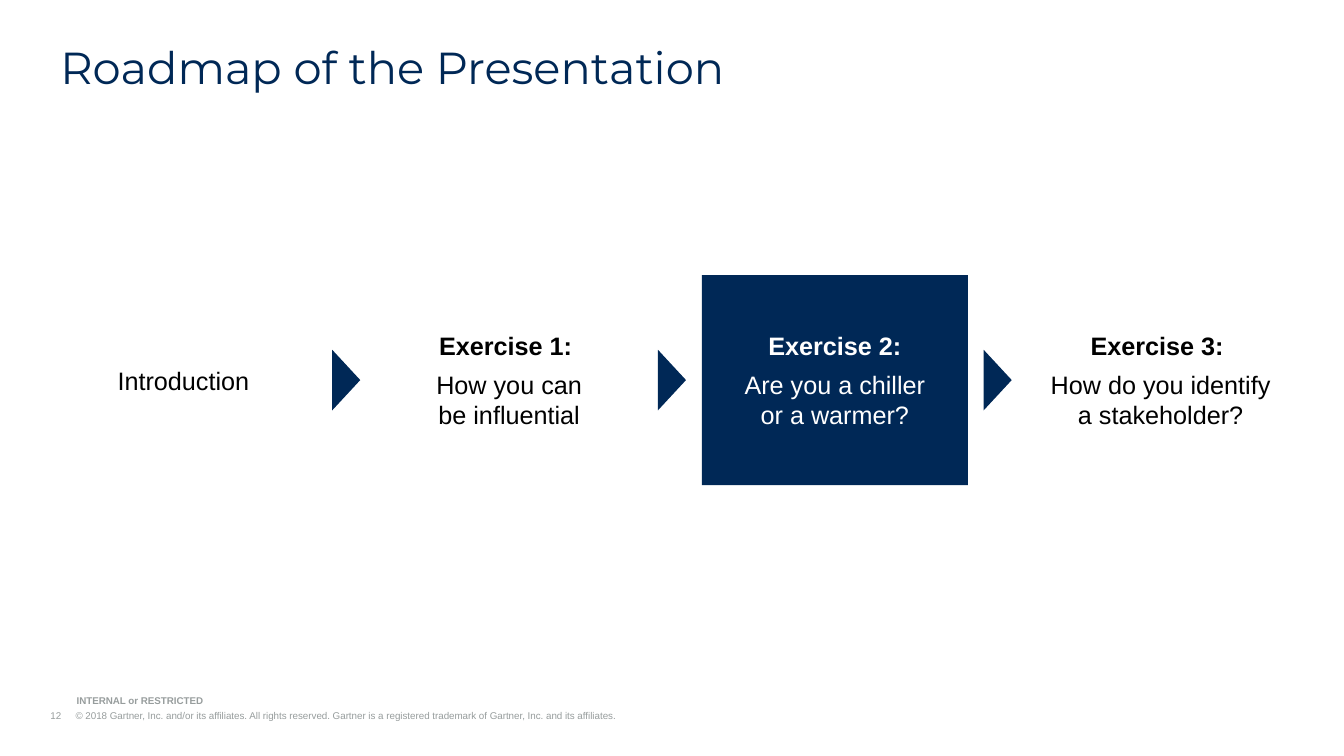
from lxml import etree
from pptx import Presentation
from pptx.dml.color import RGBColor
from pptx.enum.shapes import MSO_SHAPE
from pptx.enum.text import MSO_ANCHOR, PP_ALIGN
from pptx.oxml.ns import qn
from pptx.util import Pt

RECTANGLE = MSO_SHAPE.RECTANGLE
TRIANGLE = MSO_SHAPE.ISOSCELES_TRIANGLE
TOP, MIDDLE, BOTTOM = MSO_ANCHOR.TOP, MSO_ANCHOR.MIDDLE, MSO_ANCHOR.BOTTOM
CENTER = PP_ALIGN.CENTER

NAVY, BLACK, WHITE, GRAY = "002856", "000000", "FFFFFF", "979D9D"
SLIDE_WIDTH, SLIDE_HEIGHT, MARGIN = 960, 540, 36
STEP_WIDTH = 190
ARROW_LENGTH, ARROW_BREADTH = 20, 43.2
FOOTER_INDENT = 18

STEPS = [
    ("", "Introduction"),
    ("Exercise 1: ", "How you can\nbe influential"),
    ("Exercise 2:", "Are you a chiller\nor a warmer?"),
    ("Exercise 3: ", "How do you identify\na stakeholder?"),
]
CURRENT_STEP = 2
COPYRIGHT = ("12\t© 2018 Gartner, Inc. and/or its affiliates. All rights reserved.\u00a0"
             "Gartner is a registered trademark of Gartner, Inc. and its affiliates.")


def color(hex_string):
    return RGBColor.from_string(hex_string)


def format_runs(paragraph, size, hex_string, font="Arial", bold=False):
    for run in paragraph.runs:
        run.font.size = Pt(size)
        run.font.name = font
        run.font.bold = bold
        run.font.color.rgb = color(hex_string)


def add_filled_shape(slide, kind, left, top, width, height):
    shape = slide.shapes.add_shape(kind, Pt(left), Pt(top), Pt(width), Pt(height))
    shape.shadow.inherit = False
    shape.fill.solid()
    shape.fill.fore_color.rgb = color(NAVY)
    shape.line.fill.background()
    return shape


def add_text_box(slide, left, top, width, height, anchor):
    box = slide.shapes.add_textbox(Pt(left), Pt(top), Pt(width), Pt(height))
    box.text_frame.word_wrap = True
    box.text_frame.vertical_anchor = anchor
    return box


def add_title(slide, left, top, width, height):
    paragraph = add_text_box(slide, left, top, width, height, TOP).text_frame.paragraphs[0]
    paragraph.text = "Roadmap of the Presentation"
    paragraph.line_spacing = 0.9
    format_runs(paragraph, 32, NAVY, "Montserrat")


def add_step(slide, heading, description, current, left, top, width, height):
    if current:
        box = add_filled_shape(slide, RECTANGLE, left, top, width, height)
    else:
        box = add_text_box(slide, left, top, width, height, MIDDLE)
    frame = box.text_frame
    frame.word_wrap = True
    frame.vertical_anchor = MIDDLE
    text_color = WHITE if current else BLACK
    paragraph = frame.paragraphs[0]
    if heading:
        paragraph.text = heading
        paragraph.alignment = CENTER
        paragraph.space_after = Pt(6)
        format_runs(paragraph, 18, text_color, bold=True)
        paragraph = frame.add_paragraph()
    paragraph.text = description
    paragraph.alignment = CENTER
    paragraph.space_after = Pt(12)
    format_runs(paragraph, 18, text_color)


def add_arrow(slide, center_x, center_y):
    arrow = add_filled_shape(slide, TRIANGLE, center_x - ARROW_BREADTH / 2,
                             center_y - ARROW_LENGTH / 2, ARROW_BREADTH, ARROW_LENGTH)
    arrow.rotation = 90


def add_roadmap(slide, left, top, width, height):
    """Spread the steps evenly over the box, with an arrow in each gap."""
    pitch = (width - STEP_WIDTH) / (len(STEPS) - 1)
    for index, (heading, description) in enumerate(STEPS):
        step_left = left + index * pitch
        add_step(slide, heading, description, index == CURRENT_STEP,
                 step_left, top, STEP_WIDTH, height)
        if index:
            add_arrow(slide, step_left - (pitch - STEP_WIDTH) / 2, top + height / 2)


def add_footer_line(slide, text, bold, left, top, width, height):
    frame = add_text_box(slide, left, top, width, height, BOTTOM).text_frame
    frame.margin_left = frame.margin_right = frame.margin_top = frame.margin_bottom = 0
    paragraph = frame.paragraphs[0]
    paragraph.text = text
    format_runs(paragraph, 7, GRAY, bold=bold)
    return paragraph


def add_footer(slide, left, top, width, height):
    line_height = 8.64
    add_footer_line(slide, "INTERNAL or RESTRICTED", True,
                    left + FOOTER_INDENT + 0.7, top, 182, line_height)
    paragraph = add_footer_line(slide, COPYRIGHT, False, left,
                                top + height - line_height, width, line_height)
    properties = paragraph._p.get_or_add_pPr()
    properties.set("marL", str(Pt(FOOTER_INDENT)))
    properties.set("indent", str(-Pt(FOOTER_INDENT)))
    tabs = etree.SubElement(properties, qn("a:tabLst"))
    etree.SubElement(tabs, qn("a:tab"), pos=str(Pt(FOOTER_INDENT)), algn="l")


def main():
    presentation = Presentation()
    presentation.slide_width = Pt(SLIDE_WIDTH)
    presentation.slide_height = Pt(SLIDE_HEIGHT)
    slide = presentation.slides.add_slide(presentation.slide_layouts[6])
    content_width = SLIDE_WIDTH - 2 * MARGIN
    add_footer(slide, MARGIN, 496, content_width * 0.65, 19.5)
    add_roadmap(slide, MARGIN, 196.5, content_width, 150)
    add_title(slide, MARGIN, 28.8, content_width, 34.6)
    presentation.save("out.pptx")


if __name__ == "__main__":
    main()
